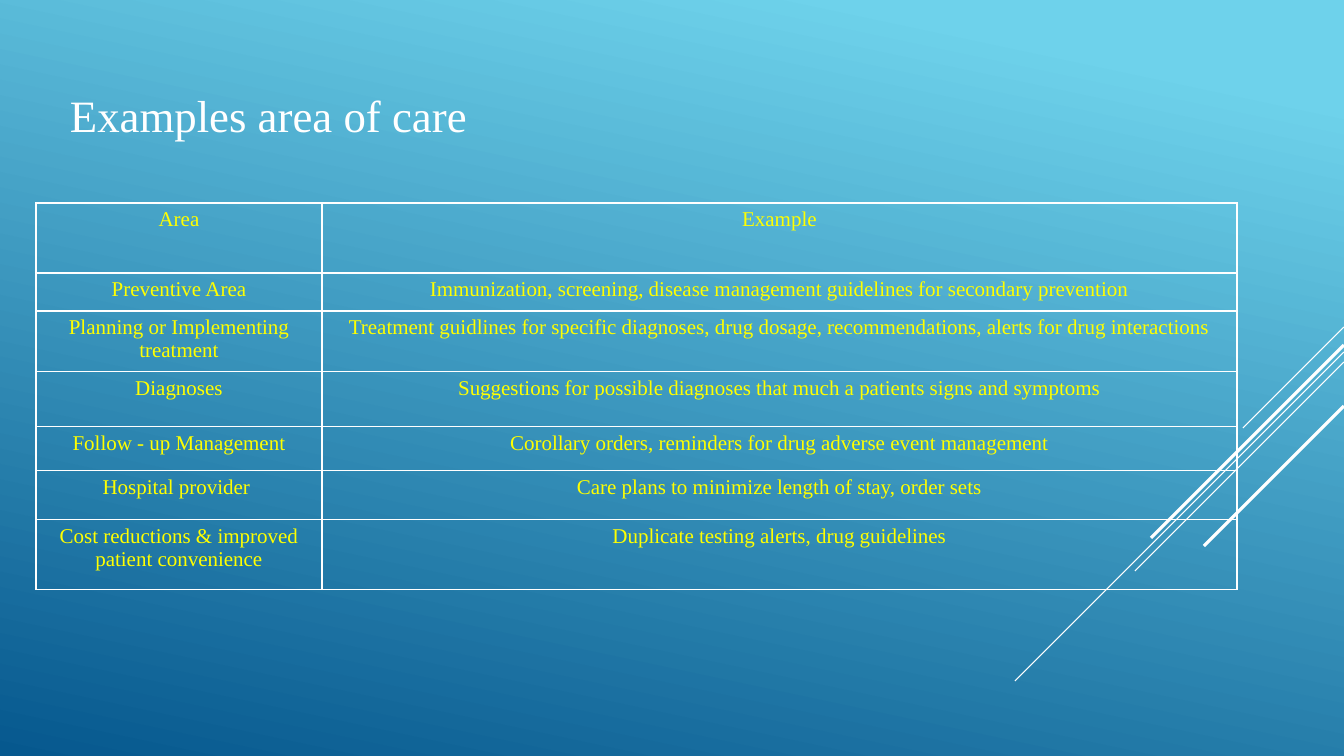
from lxml import etree
from pptx import Presentation
from pptx.dml.color import RGBColor
from pptx.enum.shapes import MSO_CONNECTOR
from pptx.enum.text import MSO_ANCHOR, PP_ALIGN
from pptx.oxml.ns import qn
from pptx.util import Pt

STRAIGHT = MSO_CONNECTOR.STRAIGHT
MIDDLE = MSO_ANCHOR.MIDDLE
LEFT, CENTER = PP_ALIGN.LEFT, PP_ALIGN.CENTER

WHITE = RGBColor(0xFF, 0xFF, 0xFF)
YELLOW = RGBColor(0xFF, 0xFF, 0x00)
SKY = RGBColor(0x6E, 0xD2, 0xEB)
NAVY = RGBColor(0x06, 0x58, 0x8E)
FONT = "Times New Roman"

EMU_PER_PX = 914400 / 100.8
SLIDE_W, SLIDE_H = 1344, 756

DIAGONALS = [(327, 101, 0.75), (352, 329, 0.75), (362, 209, 0.75),
             (345, 193, 2.25), (406, 140, 2.25)]
COL_WIDTHS = [286, 915]
CARE_AREAS = [
    (70, "Area", "Example"),
    (38, "Preventive Area",
     "Immunization, screening, disease management guidelines for secondary prevention"),
    (60, "Planning or Implementing treatment",
     "Treatment guidlines for specific diagnoses, drug dosage, recommendations, "
     "alerts for drug interactions"),
    (55, "Diagnoses",
     "Suggestions for possible diagnoses that much a patients signs and symptoms"),
    (44, "Follow - up Management",
     "Corollary orders, reminders for drug adverse event management"),
    (49, "Hospital provider ", "Care plans to minimize length of stay, order sets"),
    (70, "Cost reductions & improved patient convenience",
     "Duplicate testing alerts, drug guidelines"),
]


def px(n):
    return round(n * EMU_PER_PX)


def write_text(tf, text, size, color, align=LEFT):
    p = tf.paragraphs[0]
    p.alignment = align
    r = p.add_run()
    r.text = text
    r.font.name = FONT
    r.font.size = Pt(size)
    r.font.color.rgb = color


def set_background(s):
    fill = s.background.fill
    fill.gradient()
    fill.gradient_angle = 360 - 102
    for stop, position, color in zip(fill.gradient_stops, (0.1, 1), (SKY, NAVY)):
        stop.position = position
        stop.color.rgb = color


def add_diagonal(s, top, run, weight):
    line = s.shapes.add_connector(STRAIGHT, px(SLIDE_W), px(top),
                                  px(SLIDE_W - run), px(top + run))
    line.line.color.rgb = WHITE
    line.line.width = Pt(weight)
    etree.SubElement(line._element.spPr, qn("a:effectLst"))


def add_title(s, text):
    sp = s.shapes.add_textbox(px(60), px(73), px(940), px(84))
    tf = sp.text_frame
    tf.word_wrap = True
    tf.vertical_anchor = MIDDLE
    write_text(tf, text, 32, WHITE)


def set_borders(cell, color, weight):
    tcPr = cell._tc.get_or_add_tcPr()
    for i, side in enumerate(("lnL", "lnR", "lnT", "lnB")):
        ln = etree.Element(qn(f"a:{side}"), w=str(Pt(weight)))
        fill = etree.SubElement(ln, qn("a:solidFill"))
        etree.SubElement(fill, qn("a:srgbClr"), val=str(color))
        tcPr.insert(i, ln)


def add_care_table(s):
    heights = [row[0] for row in CARE_AREAS]
    frame = s.shapes.add_table(len(CARE_AREAS), len(COL_WIDTHS), px(36), px(203),
                               px(sum(COL_WIDTHS)), px(sum(heights)))
    table = frame.table
    table.first_row = False
    table.horz_banding = False
    for column, width in zip(table.columns, COL_WIDTHS):
        column.width = px(width)
    for row, (height, *texts) in zip(table.rows, CARE_AREAS):
        row.height = px(height)
        for cell, text in zip(row.cells, texts):
            cell.fill.background()
            set_borders(cell, WHITE, 1)
            write_text(cell.text_frame, text, 15, YELLOW, align=CENTER)


def main():
    prs = Presentation()
    prs.slide_width, prs.slide_height = px(SLIDE_W), px(SLIDE_H)
    s = prs.slides.add_slide(prs.slide_layouts[6])
    set_background(s)
    for top, run, weight in DIAGONALS:
        add_diagonal(s, top, run, weight)
    add_title(s, "Examples area of care")
    add_care_table(s)
    prs.save("out.pptx")


if __name__ == "__main__":
    main()
